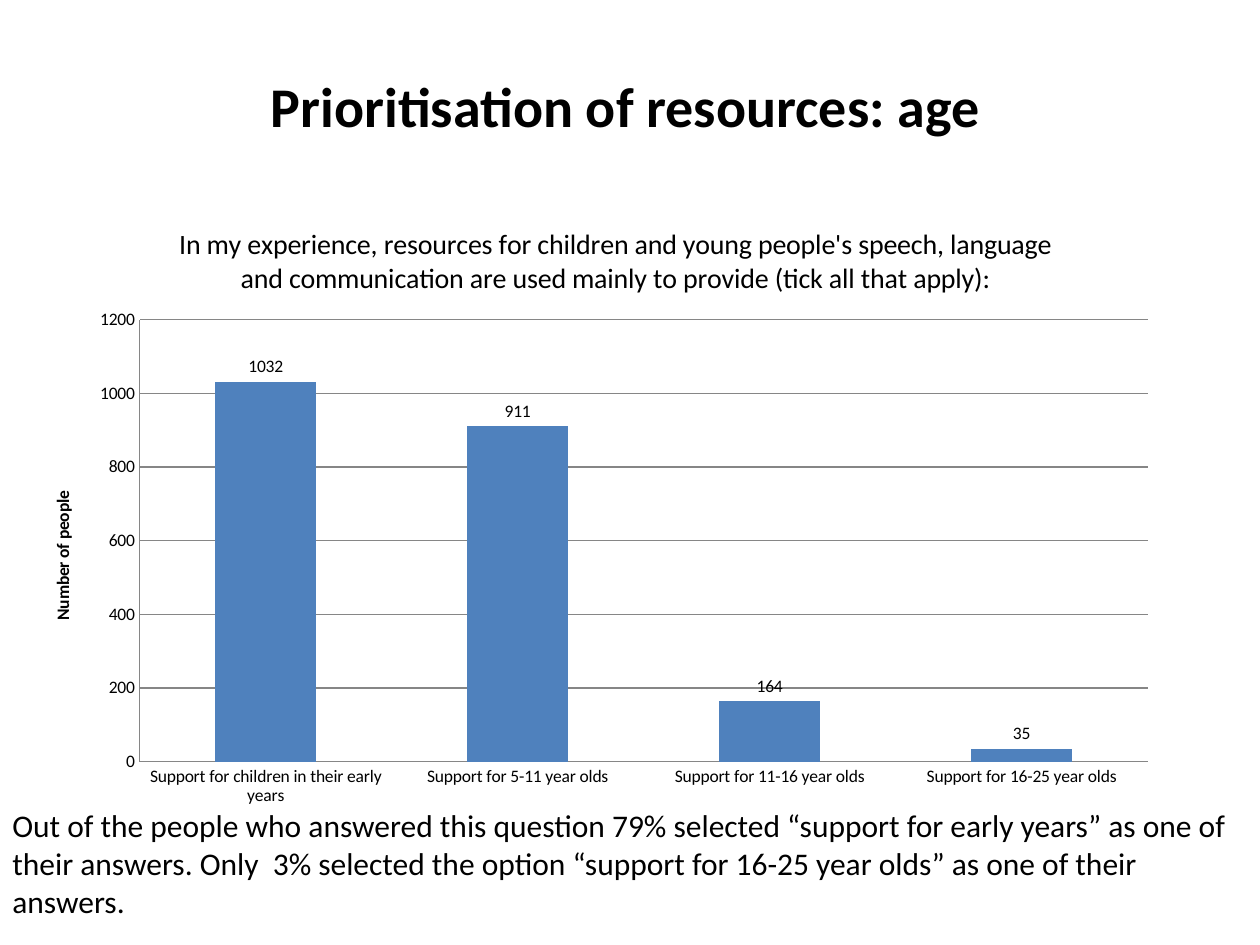
from lxml import etree
from pptx import Presentation
from pptx import util as u
from pptx.chart import data as chart_data
from pptx.dml import color
from pptx.enum import chart as chart_enum, text
from pptx.oxml import ns

FONT = "Calibri"
COLOURS = {"text": "000000", "bar": "4F81BD", "line": "868686"}
COUNTS = {
    "Support for children in their early years": 1032,
    "Support for 5-11 year olds": 911,
    "Support for 11-16 year olds": 164,
    "Support for 16-25 year olds": 35,
}
QUESTION = (
    "In my experience, resources for children and young people's speech, language "
    "and communication are used mainly to provide (tick all that apply):"
)
FINDING = (
    "Out of the people who answered this question 79% selected “support for early "
    "years” as one of their answers. Only  3% selected the option “support for "
    "16-25 year olds” as one of their answers."
)


def rgb(name):
    return color.RGBColor.from_string(COLOURS[name])


def set_values(target, values):
    for name, value in values.items():
        setattr(target, name, value)


def format_font(font, size, bold=False):
    set_values(font, {"name": FONT, "size": u.Pt(size), "bold": bold})
    font.color.rgb = rgb("text")


def place(shape, left, top, width, height):
    set_values(shape, {
        "left": u.Inches(left), "top": u.Inches(top),
        "width": u.Inches(width), "height": u.Inches(height),
    })


def write(frame, words, size, bold=False):
    para = frame.paragraphs[0]
    span = para.add_run()
    span.text = words
    format_font(span.font, size, bold)
    return para


def set_layout(parent, index, positions):
    for old in parent.findall(ns.qn("c:layout")):
        parent.remove(old)
    layout = etree.Element(ns.qn("c:layout"))
    manual = etree.SubElement(layout, ns.qn("c:manualLayout"))
    for tag, value in positions.items():
        etree.SubElement(manual, ns.qn(f"c:{tag}")).set("val", str(value))
    parent.insert(index, layout)


def add_title(page, words):
    title = page.shapes.title
    place(title, 0.12, 0.21, 9.69, 1.25)
    title.text_frame.vertical_anchor = text.MSO_ANCHOR.MIDDLE
    write(title.text_frame, words, 32, True).alignment = text.PP_ALIGN.CENTER


def add_finding(page, words):
    box = page.shapes.add_textbox(u.Inches(0), u.Inches(6.35), u.Inches(10), u.Inches(1.31))
    box.text_frame.word_wrap = True
    write(box.text_frame, words, 18)


def add_chart_title(owner, words, size, bold, x, y):
    owner.has_title = True
    title = owner.chart_title if hasattr(owner, "chart_title") else owner.axis_title
    write(title.text_frame, words, size, bold)
    set_layout(title._element, 1, {"xMode": "edge", "yMode": "edge", "x": x, "y": y})


def format_axis(axis):
    axis.major_tick_mark = chart_enum.XL_TICK_MARK.NONE
    axis.format.line.color.rgb = rgb("line")
    format_font(axis.tick_labels.font, 10)


def format_bars(plot):
    set_values(plot, {"gap_width": 150, "vary_by_categories": False, "has_data_labels": True})
    fill = plot.series[0].format.fill
    fill.solid()
    fill.fore_color.rgb = rgb("bar")
    labels = plot.data_labels
    set_values(labels, {
        "show_value": True, "number_format": "0", "number_format_is_linked": False,
        "position": chart_enum.XL_LABEL_POSITION.OUTSIDE_END,
    })
    format_font(labels.font, 10)


def add_count_chart(page):
    data = chart_data.CategoryChartData(number_format="0")
    data.categories = list(COUNTS)
    data.add_series("Series 1", list(COUNTS.values()))
    chart = page.shapes.add_chart(
        chart_enum.XL_CHART_TYPE.COLUMN_CLUSTERED,
        u.Inches(0.2), u.Inches(1.55), u.Inches(9.09), u.Inches(4.94), data,
    ).chart
    format_font(chart.font, 10)
    chart.has_legend = False
    add_chart_title(chart, QUESTION, 16, False, 0.13, 0.04)
    format_axis(chart.category_axis)
    values = chart.value_axis
    format_axis(values)
    set_values(values, {"minimum_scale": 0, "maximum_scale": 1200, "major_unit": 200,
                        "has_major_gridlines": True})
    values.major_gridlines.format.line.color.rgb = rgb("line")
    set_values(values.tick_labels, {"number_format": "0", "number_format_is_linked": False})
    add_chart_title(values, "Number of people", 10, True, 0.02, 0.47)
    format_bars(chart.plots[0])
    set_layout(chart._chartSpace.find(".//" + ns.qn("c:plotArea")), 0, {
        "layoutTarget": "inner", "xMode": "edge", "yMode": "edge",
        "x": 0.1, "y": 0.2, "w": 0.88, "h": 0.71,
    })


def main():
    deck = Presentation()
    set_values(deck, {"slide_width": u.Inches(10), "slide_height": u.Inches(7.5)})
    page = deck.slides.add_slide(deck.slide_layouts.get_by_name("Title Only"))
    add_title(page, "Prioritisation of resources: age")
    add_finding(page, FINDING)
    add_count_chart(page)
    deck.save("out.pptx")


if __name__ == "__main__":
    main()
